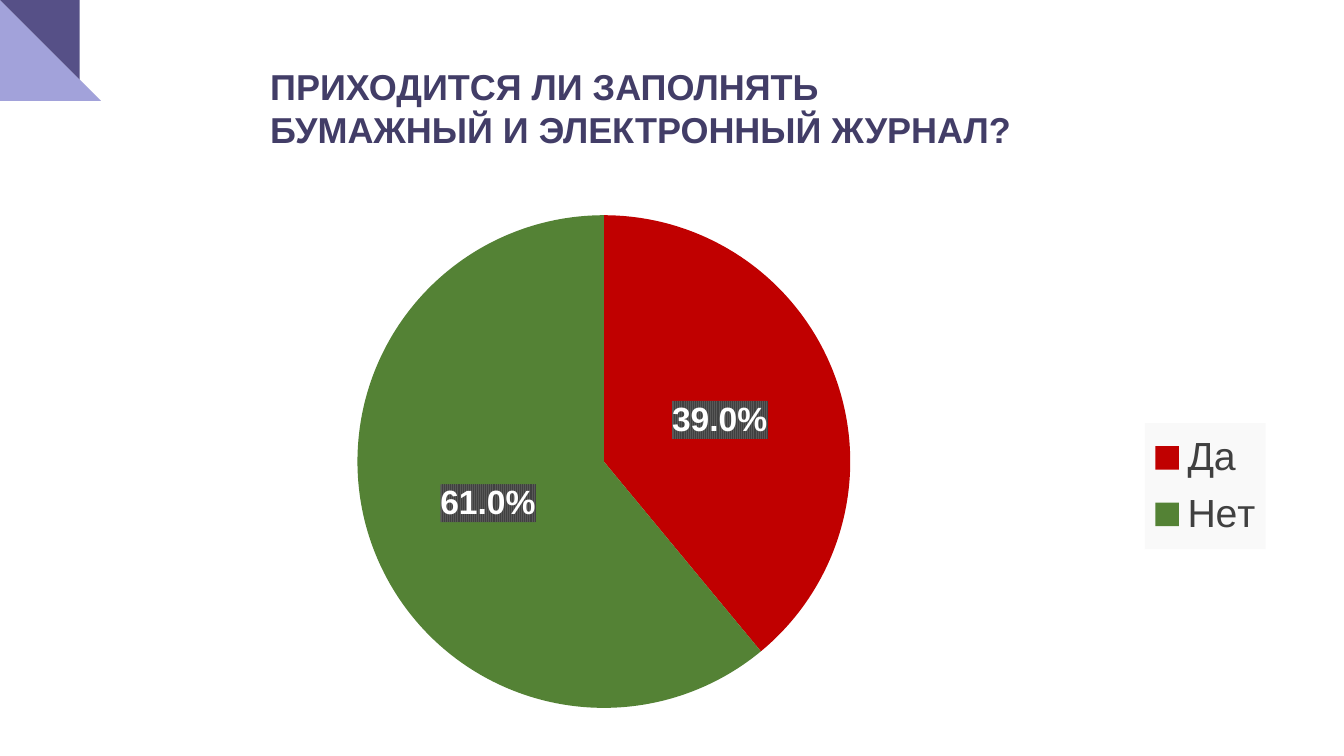
from lxml import etree
from pptx import Presentation
from pptx.chart.data import CategoryChartData
from pptx.dml.color import RGBColor
from pptx.enum.chart import XL_CHART_TYPE, XL_LABEL_POSITION, XL_LEGEND_POSITION
from pptx.enum.shapes import MSO_SHAPE
from pptx.enum.text import MSO_ANCHOR, PP_ALIGN
from pptx.oxml import parse_xml
from pptx.oxml.ns import nsdecls, qn
from pptx.util import Inches, Pt

# Content
TITLE = "ПРИХОДИТСЯ ЛИ ЗАПОЛНЯТЬ БУМАЖНЫЙ И ЭЛЕКТРОННЫЙ ЖУРНАЛ?"
ANSWERS = [("Да", 39, "C00000"), ("Нет", 61, "548235")]
FONT = "Arial"

# Corner bands, cut at the slide's left edge (inches)
BANDS = [
    ("D9D9D9", [(0, 0.08), (0.06, 0.08), (0.92, 1.12), (0.57, 1.12), (0, 0.43)]),
    ("A2A2DA", [(0, 0.1), (0.78, 1.04), (0.43, 1.04), (0, 0.52)]),
]
CORNER = 0.79

# Shares of the chart's size: left, top, width, height
PIE_AREA = (0.24, 0.026, 0.408, 0.946)
LEGEND_AREA = (0.892, 0.425, 0.1, 0.242)


def rgb(value):
    return RGBColor.from_string(value)


def box(*lengths):
    return [Inches(v) for v in lengths]


def style_font(font, size, color, bold=False):
    font.name, font.size, font.bold = FONT, Pt(size), bold
    font.color.rgb = rgb(color)


def write(tf, text, size, color, bold=False, align=PP_ALIGN.LEFT):
    tf.word_wrap = True
    p = tf.paragraphs[0]
    p.alignment = align
    r = p.add_run()
    r.text = text
    style_font(r.font, size, color, bold)


def paint(sp, color):
    sp.shadow.inherit = False
    sp.fill.solid()
    sp.fill.fore_color.rgb = rgb(color)
    sp.line.fill.background()


def chart_layout(area, inner=False):
    target = '<c:layoutTarget val="inner"/>' if inner else ""
    modes = "".join(f'<c:{a}Mode val="edge"/>' for a in "xy")
    sizes = "".join(f'<c:{a} val="{v}"/>' for a, v in zip("xywh", area))
    return parse_xml(f'<c:layout {nsdecls("c")}><c:manualLayout>{target}{modes}{sizes}'
                     '</c:manualLayout></c:layout>')


def chart_fill(fill):
    return parse_xml(f'<c:spPr {nsdecls("c", "a")}>{fill}<a:ln><a:noFill/></a:ln></c:spPr>')


def solid(color):
    return f'<a:solidFill><a:srgbClr val="{color}"/></a:solidFill>'


prs = Presentation()
prs.slide_width, prs.slide_height = box(13.33, 7.5)
s = prs.slides.add_slide(prs.slide_layouts[5])

# Corner decoration
for color, points in BANDS:
    outline = s.shapes.build_freeform(*points[0], scale=Inches(1))
    outline.add_line_segments(points[1:])
    paint(outline.convert_to_shape(), color)
triangle = s.shapes.add_shape(MSO_SHAPE.RIGHT_TRIANGLE, *box(0, 0, CORNER, CORNER))
triangle.rotation = 180
paint(triangle, "565087")

# Title
title = s.shapes.title
title.left, title.top, title.width, title.height = box(2.58, 0.59, 7.84, 0.96)
title.text_frame.vertical_anchor = MSO_ANCHOR.MIDDLE
write(title.text_frame, TITLE, 25.7, "423D67", bold=True)

# Pie chart
data = CategoryChartData()
data.categories = [name for name, _, _ in ANSWERS]
data.add_series("Series 1", [value for _, value, _ in ANSWERS])
chart = s.shapes.add_chart(XL_CHART_TYPE.PIE, *box(0.67, 2, 11.98, 5.17), data).chart
chart.has_title = False
style_font(chart.font, 10, "000000")
plot = chart.plots[0]
plot.vary_by_categories = True
for i, (_, _, color) in enumerate(ANSWERS):
    fill = plot.series[0].points[i].format.fill
    fill.solid()
    fill.fore_color.rgb = rgb(color)
plot_area = chart._chartSpace.chart.plotArea
for old in plot_area.findall(qn("c:layout")):
    plot_area.remove(old)
plot_area.insert(0, chart_layout(PIE_AREA, inner=True))

# Percentage labels on a dark striped ground
labels = plot.series[0].data_labels
labels.show_value = False
labels.show_percentage = True
labels.number_format, labels.number_format_is_linked = "0.0%", False
labels.position = XL_LABEL_POSITION.CENTER
style_font(labels.font, 24, "FFFFFF", bold=True)
stripes = ('<a:pattFill prst="narVert"><a:fgClr><a:srgbClr val="404040"/></a:fgClr>'
           '<a:bgClr><a:srgbClr val="595959"/></a:bgClr></a:pattFill>')
labels._element.find(qn("c:txPr")).addprevious(chart_fill(stripes))

# Legend
chart.has_legend = True
legend = chart.legend
legend.position = XL_LEGEND_POSITION.RIGHT
legend.include_in_layout = False
style_font(legend.font, 28, "404040")
legend_xml = legend._element
for old in legend_xml.findall(qn("c:layout")):
    legend_xml.remove(old)
legend_xml.find(qn("c:legendPos")).addnext(chart_layout(LEGEND_AREA))
legend_xml.find(qn("c:txPr")).addprevious(chart_fill(solid("F9F9F9")))

prs.save("out.pptx")
